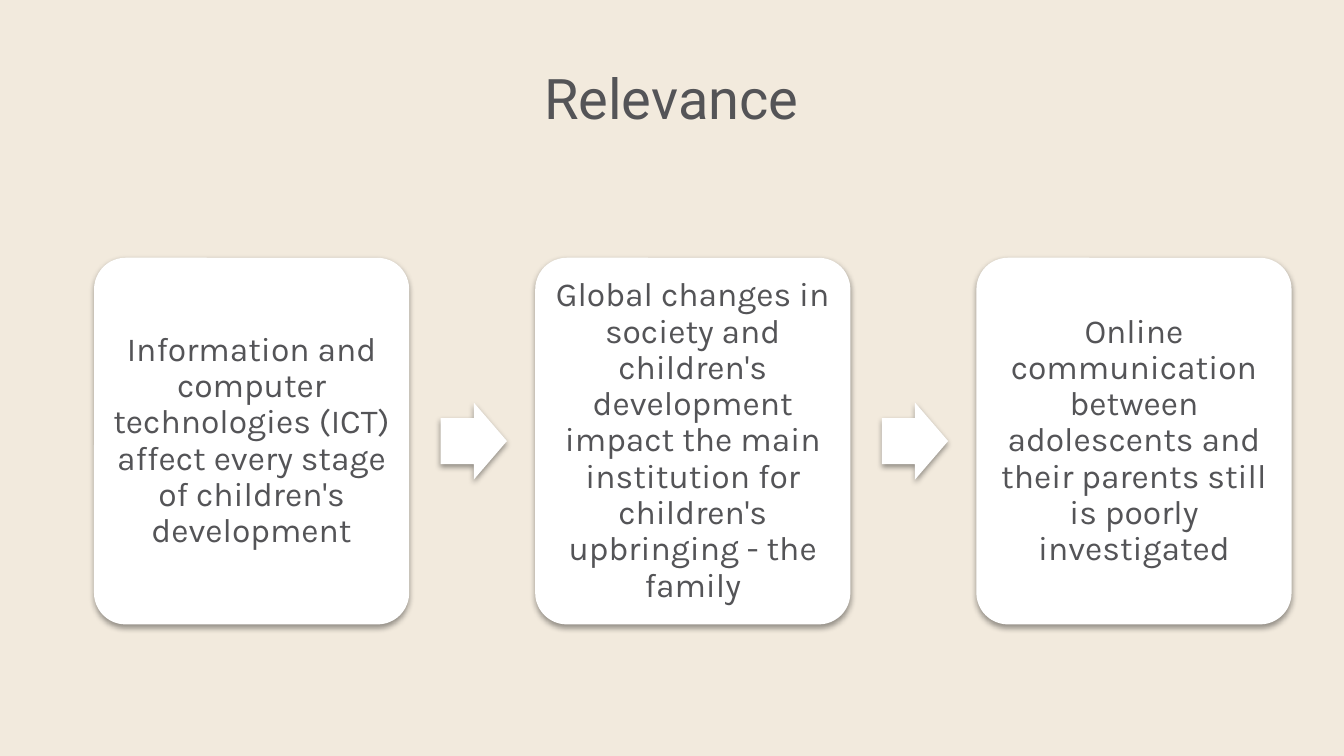
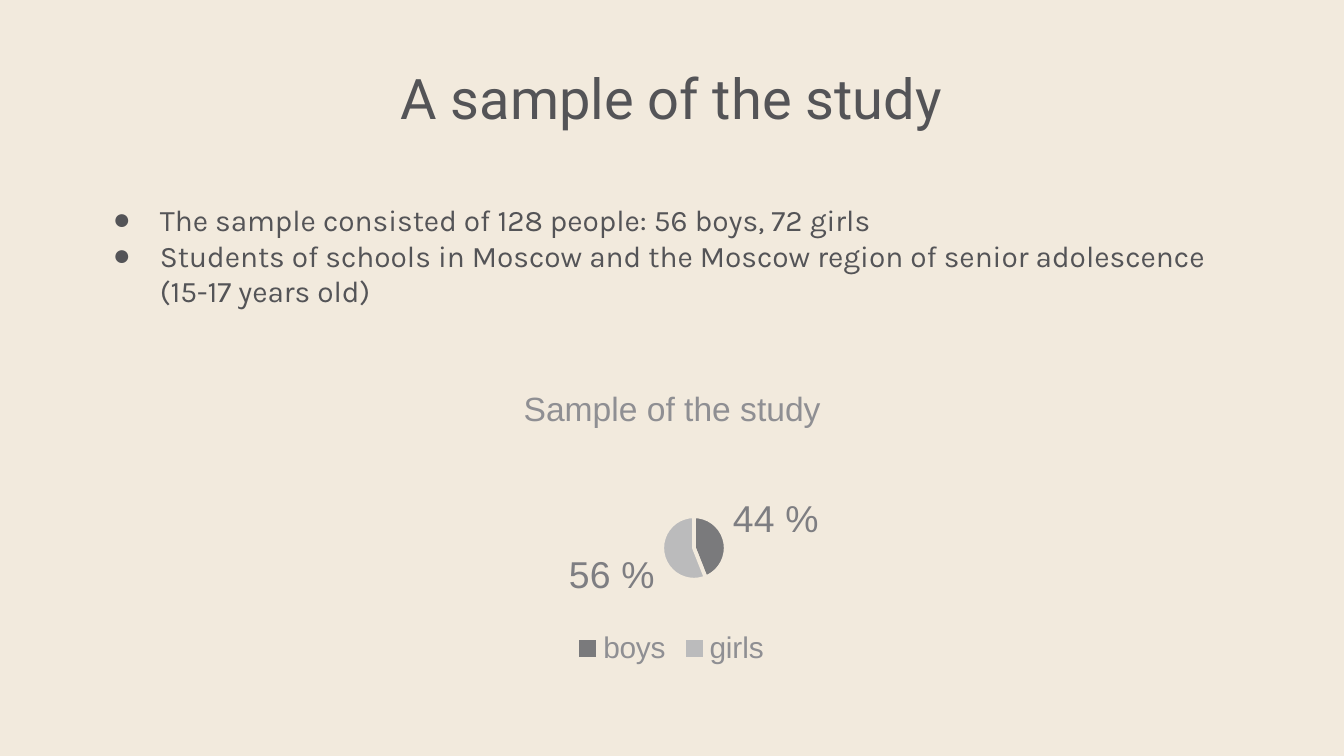
from collections import namedtuple

from lxml import etree
from pptx import Presentation
from pptx import util as u
from pptx.chart.data import CategoryChartData
from pptx.dml.color import RGBColor
from pptx.enum import chart as ch, shapes, text
from pptx.oxml import parse_xml
from pptx.oxml.ns import nsdecls, qn

SAND = RGBColor(0xF2, 0xEA, 0xDD)
WHITE = RGBColor(0xFF, 0xFF, 0xFF)
INK = RGBColor(0x54, 0x54, 0x57)
LABEL = RGBColor(0x7E, 0x7E, 0x82)
CAPTION = RGBColor(0x8F, 0x8F, 0x93)
SLICES = [RGBColor(0x7A, 0x7A, 0x7C), RGBColor(0xBB, 0xBB, 0xBC)]

COL, ROW = u.Inches(10) / 100, u.Inches(5.625) / 100
Box = namedtuple("Box", "left top width height")

TITLE_FONT = {"name": "Roboto", "size": u.Pt(30), "color": INK, "bold": False}
CARD_FONT = {"name": "Karla", "size": u.Pt(18), "color": INK}
BODY_FONT = {"name": "Karla", "size": u.Pt(16), "color": INK}
CARD_PARA = {"alignment": text.PP_ALIGN.CENTER, "line_spacing": 0.9, "space_after": u.Pt(6.3)}


def grid(col, row, cols, rows):
    """Return the box for a span of the slide's 100 by 100 grid."""
    return Box(col * COL, row * ROW, cols * COL, rows * ROW)


def part(box, x, y, w, h):
    """Return a box given as shares of another box."""
    return Box(box.left + x * box.width, box.top + y * box.height,
               w * box.width, h * box.height)


def apply(obj, values):
    """Set each attribute of an object from a dict."""
    for name, value in values.items():
        if name == "color":
            obj.color.rgb = value
        else:
            setattr(obj, name, value)


def place(sp, box):
    """Move a shape to a box."""
    apply(sp, {name: u.Emu(round(v)) for name, v in box._asdict().items()})


def frame(tf, anchor, sides, top, bottom):
    """Set the wrapping, anchor and insets of a text frame."""
    apply(tf, {"word_wrap": True, "auto_size": text.MSO_AUTO_SIZE.NONE,
               "vertical_anchor": anchor,
               "margin_left": u.Inches(sides), "margin_right": u.Inches(sides),
               "margin_top": u.Inches(top), "margin_bottom": u.Inches(bottom)})


def write(p, words, font, **para):
    """Fill a paragraph with one formatted run."""
    apply(p, para)
    r = p.add_run()
    r.text = words
    apply(r.font, font)


def add_slide(prs, layout, title):
    """Add a slide with its centred title."""
    s = prs.slides.add_slide(prs.slide_layouts.get_by_name(layout))
    sp = s.shapes.title
    place(sp, grid(6, 7.1, 87.9, 11))
    frame(sp.text_frame, text.MSO_ANCHOR.TOP, 0.1, 0.07, 0.1)
    write(sp.text_frame.paragraphs[0], title, TITLE_FONT, alignment=text.PP_ALIGN.CENTER)
    return s


def add_raised(group, preset, box, adjustments):
    """Add a white shape with a soft shadow below it."""
    sp = group.shapes.add_shape(preset, *(round(v) for v in box))
    for i, value in enumerate(adjustments):
        sp.adjustments[i] = value
    sp.fill.solid()
    sp.fill.fore_color.rgb = WHITE
    sp.line.fill.background()
    sp.shadow.inherit = False
    effects = sp._element.spPr.find(qn("a:effectLst"))
    effects.append(parse_xml(
        f'<a:outerShdw {nsdecls("a")} blurRad="{u.Pt(3.1)}" dist="{u.Pt(1.6)}" '
        'dir="5400000" rotWithShape="0"><a:srgbClr val="000000">'
        '<a:alpha val="38000"/></a:srgbClr></a:outerShdw>'))
    return sp


def add_flow(s, box, steps, gap=0.4):
    """Lay out cards in a row with an arrow in each gap."""
    group = s.shapes.add_group_shape()
    width = box.width / (len(steps) + gap * (len(steps) - 1))
    for i, step in enumerate(steps):
        card = Box(box.left + i * width * (1 + gap), box.top, width, box.height)
        if i:
            add_raised(group, shapes.MSO_SHAPE.RIGHT_ARROW,
                       part(card, 0.1 - gap, 0.395, 0.21, 0.21), [0.6, 0.5])
        sp = add_raised(group, shapes.MSO_SHAPE.ROUNDED_RECTANGLE, card, [0.1])
        frame(sp.text_frame, text.MSO_ANCHOR.MIDDLE, 0.07, 0.07, 0.07)
        write(sp.text_frame.paragraphs[0], step, CARD_FONT, **CARD_PARA)


def add_bullets(s, box, items):
    """Fill the body placeholder with a bulleted list."""
    sp = s.placeholders[1]
    place(sp, box)
    tf = sp.text_frame
    frame(tf, text.MSO_ANCHOR.TOP, 0, 0, 0)
    for i, item in enumerate(items):
        p = tf.add_paragraph() if i else tf.paragraphs[0]
        write(p, item, BODY_FONT, space_before=u.Pt(0))
        pPr = p._p.get_or_add_pPr()
        pPr.set("marL", str(u.Inches(0.5)))
        pPr.set("indent", str(u.Inches(-0.35)))
        color = etree.SubElement(pPr, qn("a:buClr"))
        etree.SubElement(color, qn("a:srgbClr"), val=str(INK))
        etree.SubElement(pPr, qn("a:buFont"), typeface="Arial")
        etree.SubElement(pPr, qn("a:buChar"), char="●")


def set_layout(parent, after, **shares):
    """Fix the place of a chart part by shares of the chart."""
    for old in parent.findall(qn("c:layout")):
        parent.remove(old)
    layout = etree.Element(qn("c:layout"))
    manual = etree.SubElement(layout, qn("c:manualLayout"))
    if "w" in shares:
        etree.SubElement(manual, qn("c:layoutTarget"), val="inner")
    for axis in "xy":
        etree.SubElement(manual, qn(f"c:{axis}Mode"), val="edge")
    for name, value in shares.items():
        etree.SubElement(manual, qn(f"c:{name}"), val=str(value))
    if after is None:
        parent.insert(0, layout)
    else:
        after.addnext(layout)


def add_pie(s, box, title, shares):
    """Add a pie chart with percentages outside its slices."""
    data = CategoryChartData(number_format='0" %"')
    data.categories = list(shares)
    data.add_series("Series 1", list(shares.values()))
    chart = s.shapes.add_chart(ch.XL_CHART_TYPE.PIE, *(round(v) for v in box), data).chart
    apply(chart.font, {"name": "Arial", "size": u.Pt(10), "color": INK})

    chart.has_title = True
    write(chart.chart_title.text_frame.paragraphs[0], title,
          {"name": "Arial", "size": u.Pt(18), "color": CAPTION, "bold": False})
    heading = chart.chart_title._element
    set_layout(heading, heading.find(qn("c:tx")), x=0.195, y=0.04)

    chart.has_legend = True
    apply(chart.legend, {"position": ch.XL_LEGEND_POSITION.BOTTOM, "include_in_layout": False})
    apply(chart.legend.font, {"name": "Arial", "size": u.Pt(16), "color": CAPTION})

    plot = chart.plots[0]
    apply(plot, {"vary_by_categories": True, "has_data_labels": True})
    apply(plot.data_labels, {"show_value": True, "show_percentage": False,
                             "number_format": '0" %"', "number_format_is_linked": False,
                             "position": ch.XL_LABEL_POSITION.OUTSIDE_END})
    apply(plot.data_labels.font, {"name": "Arial", "size": u.Pt(20), "color": LABEL})
    for i, color in enumerate(SLICES):
        fmt = plot.series[0].points[i].format
        fmt.fill.solid()
        fmt.fill.fore_color.rgb = color
        fmt.line.color.rgb = SAND
        fmt.line.width = u.Pt(2)
    set_layout(chart._chartSpace.chart.plotArea, None, x=0.48, y=0.49, w=0.13, h=0.21)


def relevance(prs):
    """Build the slide with three linked cards."""
    s = add_slide(prs, "Title Only", "Relevance")
    add_flow(s, grid(7, 34.1, 89.1, 48.5), [
        "Information and computer technologies (ICT) affect every stage of "
        "children's development",
        "Global changes in society and children's development impact the main "
        "institution for children's upbringing - the family",
        "Online communication between adolescents and their parents still is "
        "poorly investigated",
    ])


def sample(prs):
    """Build the slide with the list and the pie chart."""
    s = add_slide(prs, "Title and Content", "A sample of the study")
    add_bullets(s, grid(6.9, 26.65, 86.2, 23.5), [
        "The sample consisted of 128 people: 56 boys, 72 girls",
        "Students of schools in Moscow and the Moscow region of senior "
        "adolescence (15-17 years old)",
    ])
    add_pie(s, grid(31.2, 48.7, 37.5, 40), "Sample of the study", {"boys": 44, "girls": 56})


def main():
    """Build and save the presentation."""
    prs = Presentation()
    apply(prs, {"slide_width": u.Inches(10), "slide_height": u.Inches(5.625)})
    fill = prs.slide_master.background.fill
    fill.solid()
    fill.fore_color.rgb = SAND
    relevance(prs)
    sample(prs)
    prs.save("out.pptx")


if __name__ == "__main__":
    main()
